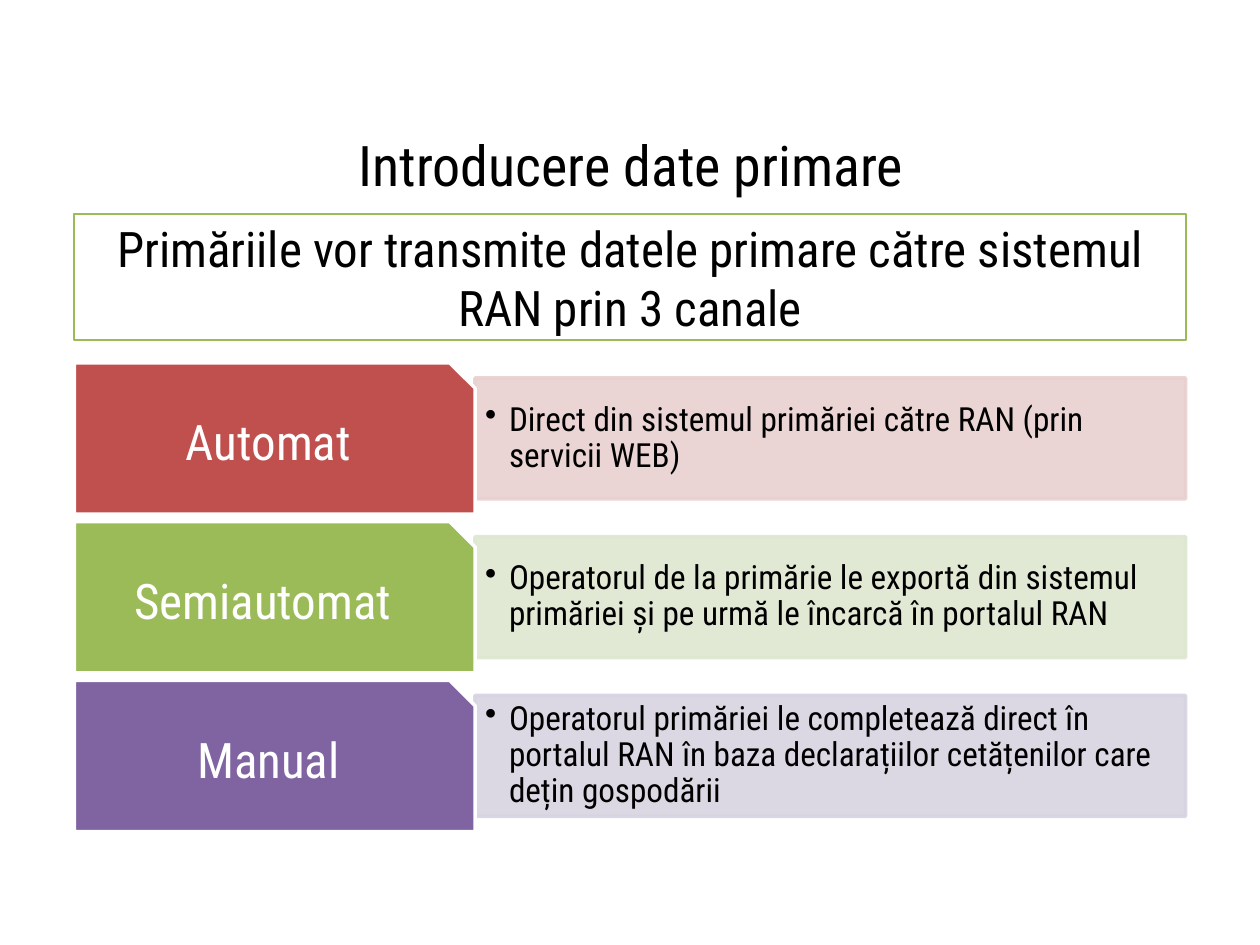
"""Build the slide on the three channels for entering primary data."""
import pptx
import pptx.dml.color
import pptx.enum.shapes
import pptx.enum.text
import pptx.oxml
import pptx.oxml.ns
import pptx.util
from pptx.util import Inches

RGBColor = pptx.dml.color.RGBColor
MSO_SHAPE = pptx.enum.shapes.MSO_SHAPE
PP_ALIGN = pptx.enum.text.PP_ALIGN
qn = pptx.oxml.ns.qn

FONT = "Roboto Condensed"
BLACK = RGBColor(0x00, 0x00, 0x00)
WHITE = RGBColor(0xFF, 0xFF, 0xFF)
RED = RGBColor(0xC0, 0x50, 0x4D)
GREEN = RGBColor(0x9B, 0xBB, 0x59)
PURPLE = RGBColor(0x80, 0x64, 0xA2)
PALE_RED = RGBColor(0xE8, 0xD0, 0xD0)
PALE_GREEN = RGBColor(0xDE, 0xE7, 0xD1)
PALE_PURPLE = RGBColor(0xD8, 0xD3, 0xE0)

CHANNELS = [
    ("Automat", RED, PALE_RED,
     "Direct din sistemul primăriei către RAN (prin servicii WEB)"),
    ("Semiautomat ", GREEN, PALE_GREEN,
     "Operatorul de la primărie le exportă din sistemul primăriei și pe urmă "
     "le încarcă în portalul RAN"),
    ("Manual", PURPLE, PALE_PURPLE,
     "Operatorul primăriei le completează direct în portalul RAN în baza "
     "declarațiilor cetățenilor care dețin gospodării"),
]
LEFT, FIRST_TOP, ROW_STEP = 0.59, 2.88, 1.26
LABEL_WIDTH, LABEL_HEIGHT = 3.18, 1.2
DETAIL_WIDTH, DETAIL_HEIGHT = 5.64, 0.96


def write(shape, text, size, color, align=PP_ALIGN.CENTER, inset=(0.1, 0.05)):
    frame = shape.text_frame
    frame.word_wrap = True
    frame.vertical_anchor = pptx.enum.text.MSO_ANCHOR.MIDDLE
    frame.margin_left = frame.margin_right = Inches(inset[0])
    frame.margin_top = frame.margin_bottom = Inches(inset[1])
    frame.text = text
    paragraph = frame.paragraphs[0]
    paragraph.alignment = align
    font = paragraph.runs[0].font
    font.name, font.size = FONT, pptx.util.Pt(size)
    font.color.rgb = color
    return paragraph


def add_box(kind, left, top, width, height, fill, line, line_width):
    box = slide.shapes.add_shape(
        kind, Inches(left), Inches(top), Inches(width), Inches(height))
    box.shadow.inherit = False
    if fill is None:
        box.fill.background()
    else:
        box.fill.solid()
        box.fill.fore_color.rgb = fill
    box.line.color.rgb = line
    box.line.width = pptx.util.Pt(line_width)
    return box


deck = pptx.Presentation()
deck.slide_width, deck.slide_height = Inches(10), Inches(7.5)
slide = deck.slides.add_slide(deck.slide_layouts[6])

title = slide.shapes.add_textbox(Inches(0.51), Inches(0.99), Inches(9), Inches(0.63))
write(title, "Introducere date primare", 32, BLACK)

for row, (name, color, pale, description) in enumerate(CHANNELS):
    top = FIRST_TOP + row * ROW_STEP
    detail = add_box(MSO_SHAPE.RECTANGLE, LEFT + LABEL_WIDTH,
                     top + (LABEL_HEIGHT - DETAIL_HEIGHT) / 2,
                     DETAIL_WIDTH, DETAIL_HEIGHT, pale, pale, 2)
    for tint in detail.element.spPr.iter(qn("a:srgbClr")):
        pptx.oxml.ns
        tint.append(pptx.oxml.parse_xml(
            f'<a:alpha {pptx.oxml.ns.nsdecls("a")} val="90000"/>'))
    bullet = write(detail, description, 19, BLACK, PP_ALIGN.LEFT, (0.08, 0.04))
    bullet.level = 1
    bullet.line_spacing = 0.9
    properties = bullet._p.get_or_add_pPr()
    properties.set("marL", str(Inches(0.19)))
    properties.set("indent", str(-Inches(0.19)))
    properties.append(pptx.oxml.parse_xml(
        f'<a:buChar {pptx.oxml.ns.nsdecls("a")} char="•"/>'))

    label = add_box(MSO_SHAPE.SNIP_1_RECTANGLE, LEFT, top,
                    LABEL_WIDTH, LABEL_HEIGHT, color, WHITE, 2)
    write(label, name, 28, WHITE, inset=(0.12, 0.06)).line_spacing = 0.9

summary = add_box(MSO_SHAPE.ROUNDED_RECTANGLE, LEFT, 1.7, 8.82, 1, None, GREEN, 1)
summary.adjustments[0] = 0
write(summary, "Primăriile vor transmite datele primare către sistemul RAN prin 3 canale",
      28, BLACK)

deck.save("out.pptx")
